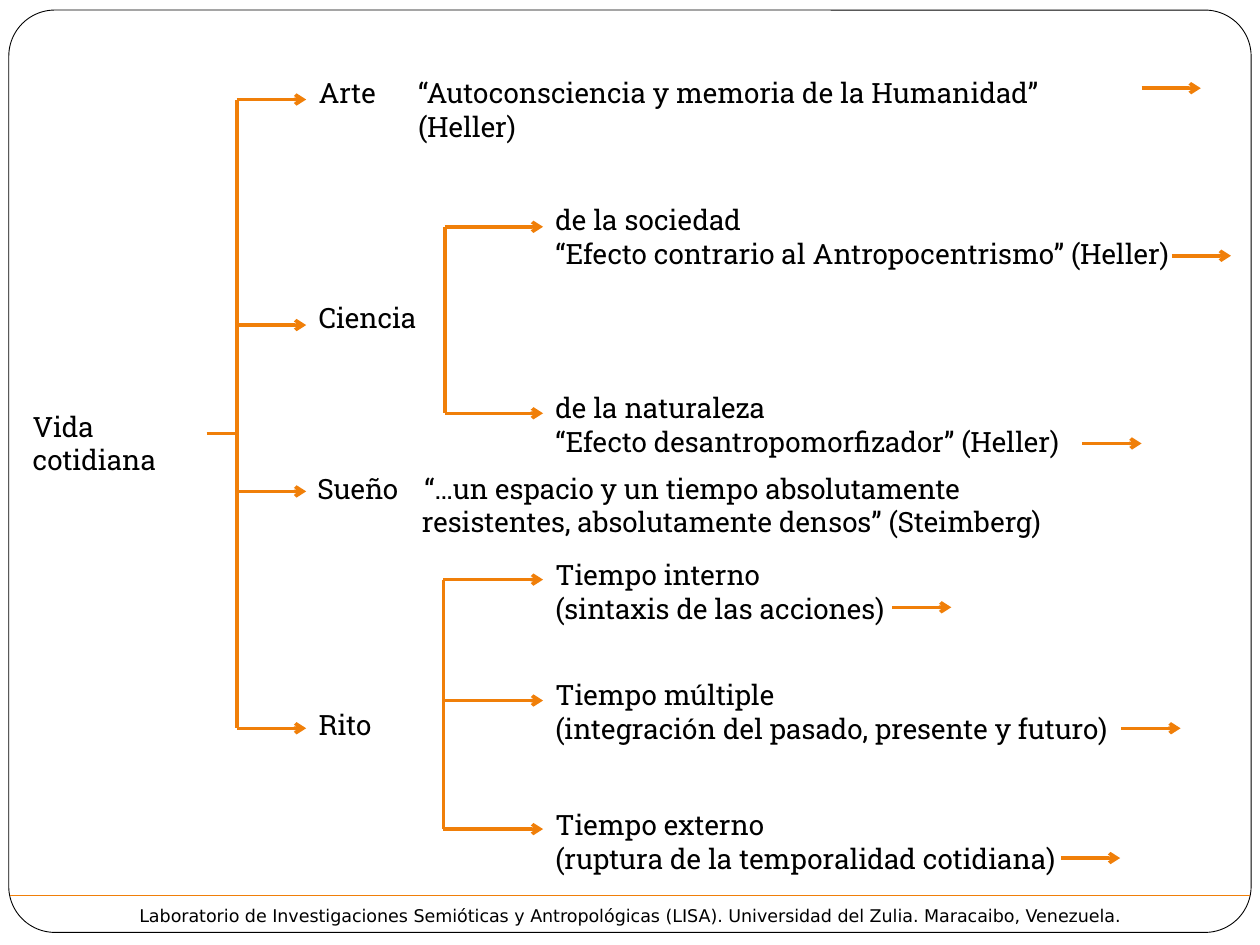
"""Builds a one-slide bracket diagram about everyday life."""
import pptx
import pptx.dml.color
import pptx.enum.shapes
import pptx.enum.text
import pptx.oxml.ns
import pptx.util
from lxml import etree

Inches = pptx.util.Inches
Pt = pptx.util.Pt
ORANGE = "F07F09"
BLACK = "000000"
WHITE = "FFFFFF"


def color(hex_string):
    return pptx.dml.color.RGBColor.from_string(hex_string)


def write(paragraph, text, size=16, font="Roboto Slab", fill=BLACK, align=None, margin=0, indent=0):
    run = paragraph.add_run()
    run.text = text
    run.font.size = Pt(size)
    run.font.name = font
    run.font.color.rgb = color(fill)
    paragraph.alignment = align
    if margin:
        properties = paragraph._p.get_or_add_pPr()
        properties.set("marL", str(Inches(margin)))
        properties.set("indent", str(Inches(indent)))


class Diagram:
    def __init__(self, slide, line_color=ORANGE, line_width=2):
        self.slide = slide
        self.line_color = line_color
        self.line_width = line_width

    def panel(self, left, top, width, height):
        shape = self.slide.shapes.add_shape(
            pptx.enum.shapes.MSO_SHAPE.ROUNDED_RECTANGLE,
            Inches(left), Inches(top), Inches(width), Inches(height))
        shape.adjustments[0] = 0.05
        shape.shadow.inherit = False
        shape.fill.solid()
        shape.fill.fore_color.rgb = color(WHITE)
        shape.line.color.rgb = color(BLACK)
        shape.line.width = Pt(0.5)

    def text(self, left, top, width, height, *lines, **style):
        shape = self.slide.shapes.add_textbox(
            Inches(left), Inches(top), Inches(width), Inches(height))
        frame = shape.text_frame
        frame.word_wrap = True
        frame.auto_size = pptx.enum.text.MSO_AUTO_SIZE.SHAPE_TO_FIT_TEXT
        for index, line in enumerate(lines):
            paragraph = frame.add_paragraph() if index else frame.paragraphs[0]
            write(paragraph, line, **style)
        return frame

    def line(self, x1, y1, x2, y2, arrow=False, width=None):
        connector = self.slide.shapes.add_connector(
            pptx.enum.shapes.MSO_CONNECTOR.STRAIGHT,
            Inches(x1), Inches(y1), Inches(x2), Inches(y2))
        connector.line.color.rgb = color(self.line_color)
        connector.line.width = Pt(width or self.line_width)
        if arrow:
            outline = connector.line._get_or_add_ln()
            etree.SubElement(outline, pptx.oxml.ns.qn("a:tailEnd"), type="arrow")
        etree.SubElement(connector._element.spPr, pptx.oxml.ns.qn("a:effectLst"))

    def bracket(self, trunk, tip, heights):
        self.line(trunk, heights[0], trunk, heights[-1])
        for height in heights:
            self.line(trunk, height, tip, height, arrow=True)

    def onward(self, left, height):
        self.line(left, height, left + 0.47, height, arrow=True)


def main():
    presentation = pptx.Presentation()
    presentation.slide_width = Inches(10)
    presentation.slide_height = Inches(7.5)
    slide = presentation.slides.add_slide(presentation.slide_layouts[6])
    diagram = Diagram(slide)

    diagram.panel(0.07, 0.08, 9.86, 7.32)
    diagram.text(0.16, 3.2, 1.88, 0.64, "Vida", "cotidiana")
    for label, top, width in (("Arte", 0.55, 0.7), ("Ciencia", 2.34, 1), ("Rito", 5.57, 0.7)):
        diagram.text(2.43, top, width, 0.37, label)
    diagram.text(3.22, 0.55, 5.94, 0.64, "“Autoconsciencia y memoria de la Humanidad” (Heller)")
    diagram.onward(9.06, 0.7)

    details = (
        (1.56, "de la sociedad", "“Efecto contrario al Antropocentrismo” (Heller)", 9.3, 2.03),
        (3.05, "de la naturaleza", "“Efecto desantropomorfizador” (Heller)", 8.59, 3.52),
        (4.38, "Tiempo interno", "(sintaxis de las acciones)", 7.08, 4.82),
        (5.33, "Tiempo múltiple", "(integración del pasado, presente y futuro)", 8.9, 5.78),
        (6.36, "Tiempo externo", "(ruptura de la temporalidad cotidiana)", 8.42, 6.81),
    )
    for top, heading, detail, arrow_left, arrow_height in details:
        diagram.text(4.31, top, 5.39, 0.64, heading, detail)
        diagram.onward(arrow_left, arrow_height)

    frame = diagram.text(2.42, 3.69, 6.25, 0.64, "Sueño\t“…un espacio y un tiempo absolutamente",
                         margin=0.85, indent=-0.85)
    write(frame.add_paragraph(), "resistentes, absolutamente densos” (Steimberg)", margin=0.83)

    diagram.bracket(1.88, 2.43, (0.79, 2.58, 3.9, 5.78))
    diagram.line(1.64, 3.44, 1.88, 3.44)
    diagram.bracket(3.53, 4.31, (1.8, 3.28))
    diagram.bracket(3.52, 4.31, (4.6, 5.56, 6.58))

    diagram.line(0.08, 7.11, 9.92, 7.11, width=0.75)
    diagram.text(0, 7.13, 10, 0.27,
                 "Laboratorio de Investigaciones Semióticas y Antropológicas (LISA). "
                 "Universidad del Zulia. Maracaibo, Venezuela.",
                 size=10, font="DejaVu Sans", align=pptx.enum.text.PP_ALIGN.CENTER)
    presentation.save("out.pptx")


if __name__ == "__main__":
    main()
